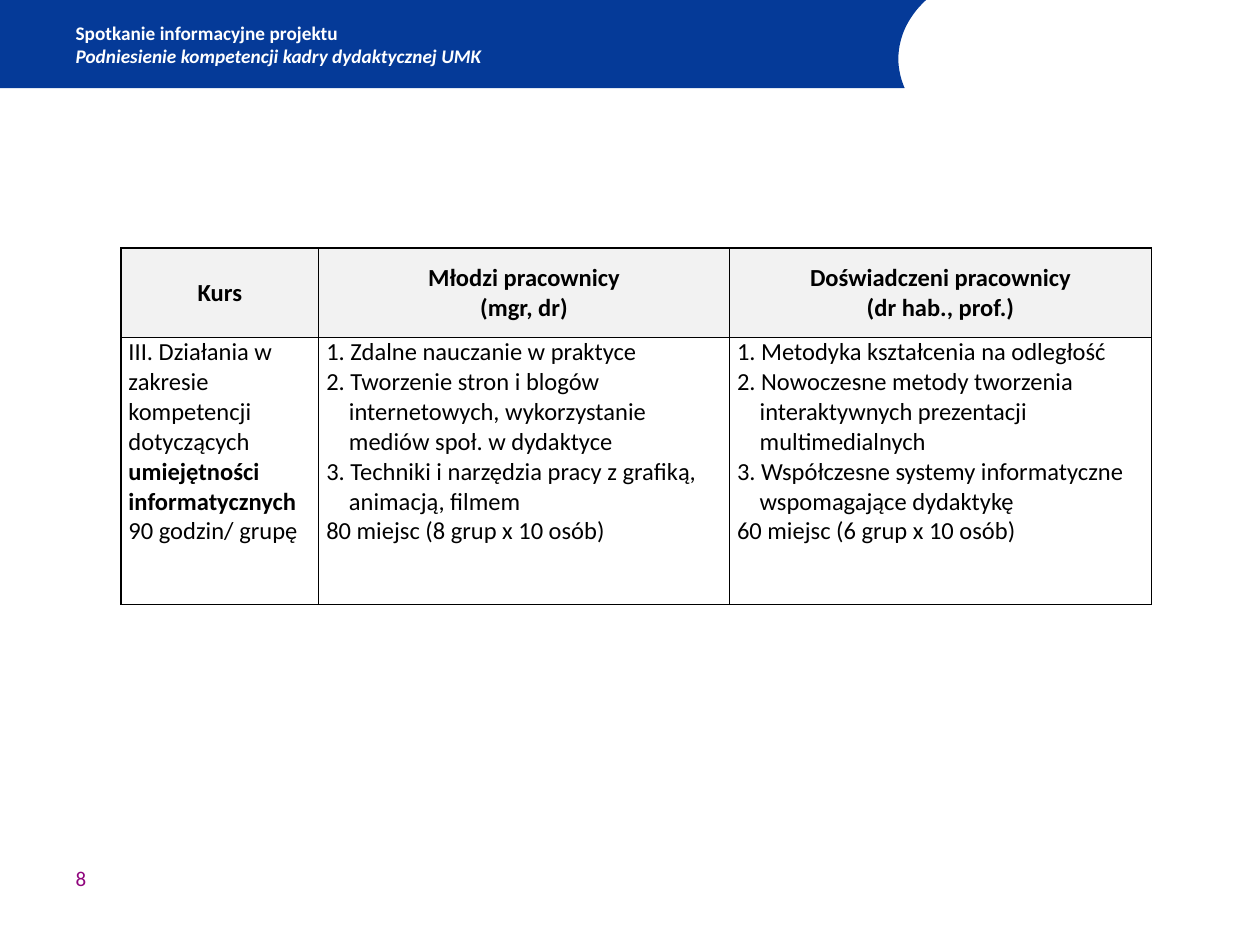
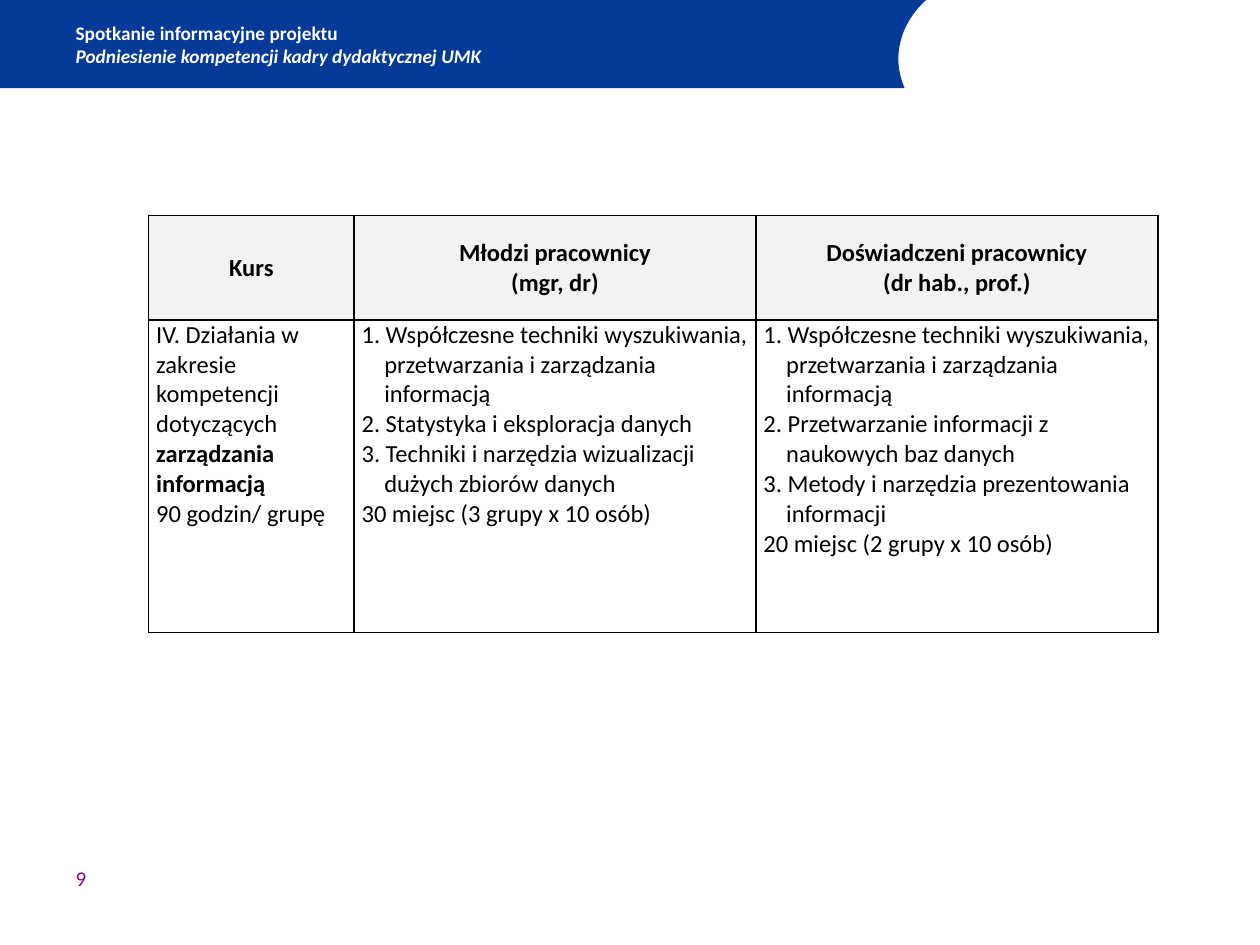
from dataclasses import dataclass

from lxml.etree import SubElement
from pptx import Presentation
from pptx.dml.color import RGBColor
from pptx.enum.text import MSO_ANCHOR, MSO_AUTO_SIZE, PP_ALIGN
from pptx.oxml import parse_xml
from pptx.oxml.ns import nsdecls, qn
from pptx.slide import Slide
from pptx.table import _Cell
from pptx.text.text import Font
from pptx.util import Inches, Pt

NAVY = RGBColor(0x05, 0x3A, 0x98)
PURPLE = RGBColor(0x90, 0x05, 0x7D)
GREY = RGBColor(0xF2, 0xF2, 0xF2)
WHITE = RGBColor(0xFF, 0xFF, 0xFF)
BLACK = RGBColor(0, 0, 0)
FONT = "Calibri"

HEADER = "Spotkanie informacyjne projektu\vPodniesienie kompetencji kadry dydaktycznej UMK"
COLUMN_HEADS = (
    "Kurs",
    "Młodzi pracownicy\n(mgr, dr)",
    "Doświadczeni pracownicy\n(dr hab., prof.)",
)
SCOPE = "Działania w zakresie kompetencji dotyczących "
HOURS = "90 godzin/ grupę"
CURVES = (
    ((7.18, 0.7), (7.15, 0.63), (7.13, 0.55), (7.13, 0.47)),
    ((7.13, 0.47), (7.13, 0.28), (7.22, 0.12), (7.35, 0)),
)
CURVE_STEPS = 16


@dataclass
class Audience:
    topics: tuple[str, ...]
    places: str


@dataclass
class Course:
    page: int
    numeral: str
    subject: str
    audiences: tuple[Audience, Audience]
    left: float
    top: float
    widths: tuple[float, ...]
    heights: tuple[float, float]


COURSES = (
    Course(
        8, "III.", "umiejętności informatycznych",
        (
            Audience((
                "Zdalne nauczanie w praktyce",
                "Tworzenie stron i blogów internetowych, wykorzystanie mediów społ. w dydaktyce",
                "Techniki i narzędzia pracy z grafiką, animacją, filmem",
            ), "80 miejsc (8 grup x 10 osób)"),
            Audience((
                "Metodyka kształcenia na odległość",
                "Nowoczesne metody tworzenia interaktywnych prezentacji multimedialnych",
                "Współczesne systemy informatyczne wspomagające dydaktykę",
            ), "60 miejsc (6 grup x 10 osób)"),
        ),
        0.96, 1.97, (1.57, 3.26, 3.35), (0.71, 2.12),
    ),
    Course(
        9, "IV.", "zarządzania informacją",
        (
            Audience((
                "Współczesne techniki wyszukiwania, przetwarzania i zarządzania informacją",
                "Statystyka i eksploracja danych",
                "Techniki i narzędzia wizualizacji dużych zbiorów danych",
            ), "30 miejsc (3 grupy x 10 osób)"),
            Audience((
                "Współczesne techniki wyszukiwania, przetwarzania i zarządzania informacją",
                "Przetwarzanie informacji z naukowych baz danych",
                "Metody i narzędzia prezentowania informacji",
            ), "20 miejsc (2 grupy x 10 osób)"),
        ),
        1.18, 1.71, (1.63, 3.19, 3.19), (0.83, 2.48),
    ),
)


def style(font: Font, size: float, color: RGBColor, bold: bool = False) -> None:
    font.name = FONT
    font.size = Pt(size)
    font.bold = bold
    font.color.rgb = color


def curve_point(curve: tuple, t: float) -> tuple[int, int]:
    weights = ((1 - t) ** 3, 3 * t * (1 - t) ** 2, 3 * t * t * (1 - t), t ** 3)
    x, y = (sum(w * point[axis] for w, point in zip(weights, curve)) for axis in (0, 1))
    return Inches(x), Inches(y)


def add_band(slide: Slide) -> None:
    builder = slide.shapes.build_freeform(0, 0)
    edge = [curve_point(curve, i / CURVE_STEPS)
            for curve in CURVES for i in range(CURVE_STEPS + 1)]
    builder.add_line_segments([(0, Inches(0.7)), *edge], close=True)
    sp = builder.convert_to_shape()
    sp.shadow.inherit = False
    sp.fill.solid()
    sp.fill.fore_color.rgb = NAVY
    sp.line.fill.background()
    slide.shapes._spTree.insert(2, sp._element)


def add_header(slide: Slide) -> None:
    title = slide.shapes.title
    title._element.getparent().remove(title._element)
    sp = slide.placeholders[1]
    sp.left, sp.top, sp.width, sp.height = map(Inches, (0.5, 0.12, 6.43, 0.47))
    tf = sp.text_frame
    tf.word_wrap = True
    tf.vertical_anchor = MSO_ANCHOR.TOP
    p = tf.paragraphs[0]
    p.text = HEADER
    p.space_before = Pt(0)
    for r in p.runs:
        style(r.font, 11, WHITE, bold=True)
    p.runs[-1].font.italic = True


def add_page_number(slide: Slide, page: int) -> None:
    sp = slide.shapes.add_textbox(*map(Inches, (0.6, 6.65, 0.46, 0.43)))
    tf = sp.text_frame
    tf.word_wrap = True
    tf.auto_size = MSO_AUTO_SIZE.SHAPE_TO_FIT_TEXT
    tf.margin_left = tf.margin_right = tf.margin_top = 0
    tf.margin_bottom = Inches(0.05)
    p = tf.paragraphs[0]
    p.text = str(page)
    p.line_spacing = Pt(30)
    style(p.runs[0].font, 12, PURPLE)


def set_borders(cell: _Cell) -> None:
    tc_pr = cell._tc.get_or_add_tcPr()
    for i, side in enumerate(("lnL", "lnR", "lnT", "lnB")):
        ln = parse_xml(f'<a:{side} {nsdecls("a")} w="{Pt(1)}"/>')
        fill = SubElement(ln, qn("a:solidFill"))
        SubElement(fill, qn("a:srgbClr"), val=str(BLACK))
        tc_pr.insert(i, ln)


def format_cell(cell: _Cell, is_head: bool) -> None:
    cell.margin_left = cell.margin_right = Inches(0.06)
    cell.margin_top = cell.margin_bottom = 0
    cell.vertical_anchor = MSO_ANCHOR.MIDDLE if is_head else MSO_ANCHOR.TOP
    if is_head:
        cell.fill.solid()
        cell.fill.fore_color.rgb = GREY
    else:
        cell.fill.background()
    set_borders(cell)
    for p in cell.text_frame.paragraphs:
        p.alignment = PP_ALIGN.CENTER if is_head else PP_ALIGN.LEFT
        for r in p.runs:
            style(r.font, 14, BLACK, bold=is_head)


def fill_audience(cell: _Cell, audience: Audience) -> None:
    topics = [f"{i}. {topic}" for i, topic in enumerate(audience.topics, 1)]
    cell.text = "\n".join([*topics, audience.places])
    format_cell(cell, is_head=False)
    for p in cell.text_frame.paragraphs[:-1]:
        p_pr = p._p.get_or_add_pPr()
        p_pr.set("marL", str(Inches(0.18)))
        p_pr.set("indent", str(-Inches(0.18)))


def fill_course(cell: _Cell, course: Course) -> None:
    cell.text = f"{course.numeral} {SCOPE}\n{HOURS}"
    subject = cell.text_frame.paragraphs[0].add_run()
    subject.text = course.subject
    format_cell(cell, is_head=False)
    subject.font.bold = True


def add_course_table(slide: Slide, course: Course) -> None:
    frame = slide.shapes.add_table(
        len(course.heights), len(course.widths), Inches(course.left), Inches(course.top),
        Inches(sum(course.widths)), Inches(sum(course.heights)))
    table = frame.table
    table.horz_banding = False
    for column, width in zip(table.columns, course.widths):
        column.width = Inches(width)
    for row, height in zip(table.rows, course.heights):
        row.height = Inches(height)
    for i, head in enumerate(COLUMN_HEADS):
        cell = table.cell(0, i)
        cell.text = head
        format_cell(cell, is_head=True)
    fill_course(table.cell(1, 0), course)
    for i, audience in enumerate(course.audiences, 1):
        fill_audience(table.cell(1, i), audience)


def main() -> None:
    prs = Presentation()
    prs.slide_width, prs.slide_height = Inches(10), Inches(7.5)
    layout = prs.slide_layouts.get_by_name("Section Header")
    for course in COURSES:
        slide = prs.slides.add_slide(layout)
        add_band(slide)
        add_header(slide)
        add_page_number(slide, course.page)
        add_course_table(slide, course)
    prs.save("out.pptx")


if __name__ == "__main__":
    main()
